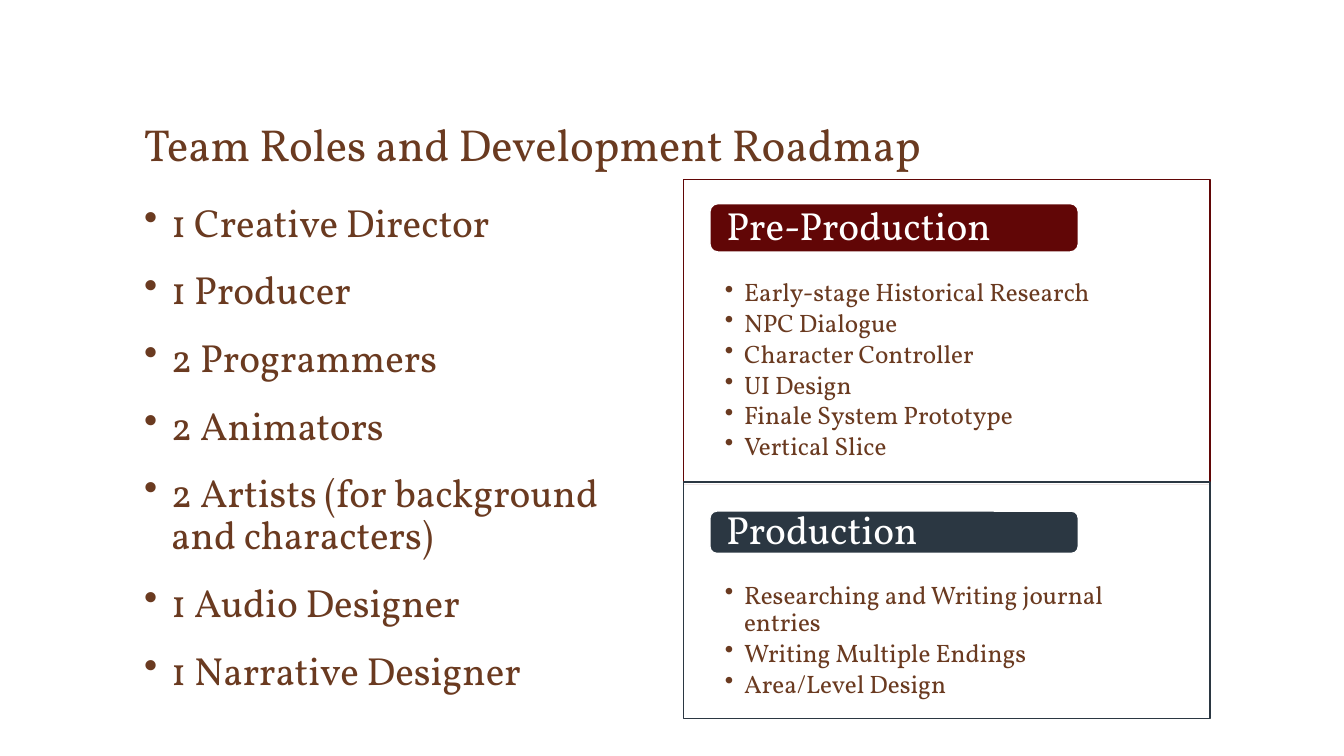
from dataclasses import dataclass

from lxml import etree
from pptx import Presentation
from pptx import util as u
from pptx.dml.color import RGBColor
from pptx.enum import shapes, text
from pptx.oxml.ns import qn


@dataclass(frozen=True)
class Theme:
    """Colours, font and type sizes of the deck."""
    ink: str = "6A3A20"
    paper: str = "FFFFFF"
    maroon: str = "610606"
    slate: str = "2B3742"
    font: str = "Vollkorn"
    title: int = 32
    large: int = 28
    small: int = 18


THEME = Theme()
WIDTH, HEIGHT = 13.33, 7.5
MARGIN, COLUMN, GUTTER = 1.33, 5.22, 0.23
ROADMAP_LEFT = MARGIN + COLUMN + GUTTER

ROLES = ["1 Creative Director", "1 Producer", "2 Programmers", "2 Animators",
         "2 Artists (for background and characters)", "1 Audio Designer",
         "1 Narrative Designer"]
PHASES = [
    ("Pre-Production", THEME.maroon, (1.78, 3.03), (0.24, 0.48),
     ["Early-stage Historical Research", "NPC Dialogue", "Character Controller",
      "UI Design", "Finale System Prototype", "Vertical Slice"]),
    ("Production", THEME.slate, (4.78, 2.35), (0.29, 0.42),
     ["Researching and Writing journal entries", "Writing Multiple Endings",
      "Area/Level Design"]),
]


def inches(box):
    """Turn a box of inches into lengths."""
    return [u.Inches(value) for value in box]


def add_bullet(paragraph, indent):
    """Give a paragraph a hanging bullet in the ink colour."""
    properties = paragraph._p.get_or_add_pPr()
    properties.set("marL", str(u.Inches(indent)))
    properties.set("indent", str(-u.Inches(indent)))
    colour = etree.SubElement(properties, qn("a:buClr"))
    etree.SubElement(colour, qn("a:srgbClr"), val=THEME.ink)
    etree.SubElement(properties, qn("a:buChar"), char="•")


def write(frame, lines, size, colour=THEME.ink, indent=0, before=0, after=0,
          insets=(0.1, 0.05, 0.1, 0.05), anchor=text.MSO_ANCHOR.TOP):
    """Fill a text frame with one paragraph per line."""
    frame_format = dict(zip(("margin_left", "margin_top", "margin_right",
                             "margin_bottom"), inches(insets)))
    frame_format.update(word_wrap=True, vertical_anchor=anchor)
    for name, value in frame_format.items():
        setattr(frame, name, value)
    for index, line in enumerate(lines):
        paragraph = frame.add_paragraph() if index else frame.paragraphs[0]
        if indent:
            add_bullet(paragraph, indent)
        spacing = {"alignment": text.PP_ALIGN.LEFT, "line_spacing": 0.9,
                   "space_before": u.Pt(before if index else 0),
                   "space_after": u.Pt(after)}
        for name, value in spacing.items():
            setattr(paragraph, name, value)
        run = paragraph.add_run()
        run.text = line
        for name, value in {"name": THEME.font, "size": u.Pt(size)}.items():
            setattr(run.font, name, value)
        run.font.color.rgb = RGBColor.from_string(colour)


def add_panel(slide, kind, box, fill, line):
    """Draw a filled shape with a one-point outline."""
    panel = slide.shapes.add_shape(kind, *inches(box))
    panel.shadow.inherit = False
    panel.fill.solid()
    panel.fill.fore_color.rgb = RGBColor.from_string(fill)
    panel.line.color.rgb = RGBColor.from_string(line)
    panel.line.width = u.Pt(1)
    return panel


def add_title(slide, box, title):
    """Place the slide title at the foot of its box."""
    heading = slide.shapes.add_textbox(*inches(box))
    write(heading.text_frame, [title], THEME.title, anchor=text.MSO_ANCHOR.BOTTOM)


def add_roles(slide, box, roles):
    """List the team roles."""
    team = slide.shapes.add_textbox(*inches(box))
    write(team.text_frame, roles, THEME.large, indent=0.27, before=18)


def add_phase(slide, box, name, colour, label_rows, tasks):
    """Draw a roadmap phase: a card of tasks under a coloured label."""
    left, top, width, _ = box
    offset, label_height = label_rows
    card = add_panel(slide, shapes.MSO_SHAPE.RECTANGLE, box, THEME.paper, colour)
    for tint in card._element.spPr.xpath("./a:solidFill/a:srgbClr"):
        etree.SubElement(tint, qn("a:alpha"), val="90000")
    write(card.text_frame, tasks, THEME.small, indent=0.19, after=2.5,
          insets=(0.41, 1, 0.41, 0.14))
    label_box = (left + width * 0.05, top + offset, width * 0.7, label_height)
    label = add_panel(slide, shapes.MSO_SHAPE.ROUNDED_RECTANGLE, label_box,
                      colour, THEME.paper)
    write(label.text_frame, [name], THEME.large, THEME.paper,
          insets=(0.14, 0, 0.14, 0), anchor=text.MSO_ANCHOR.MIDDLE)


def main():
    """Build and save the slide."""
    deck = Presentation()
    deck.slide_width, deck.slide_height = inches((WIDTH, HEIGHT))
    slide = deck.slides.add_slide(deck.slide_layouts[6])
    add_title(slide, (MARGIN, 0.47, WIDTH - 2 * MARGIN, 1.28),
              "Team Roles and Development Roadmap")
    add_roles(slide, (MARGIN, 1.97, COLUMN, 5.06), ROLES)
    for name, colour, (top, height), label_rows, tasks in PHASES:
        add_phase(slide, (ROADMAP_LEFT, top, COLUMN, height),
                  name, colour, label_rows, tasks)
    deck.save("out.pptx")


if __name__ == "__main__":
    main()
